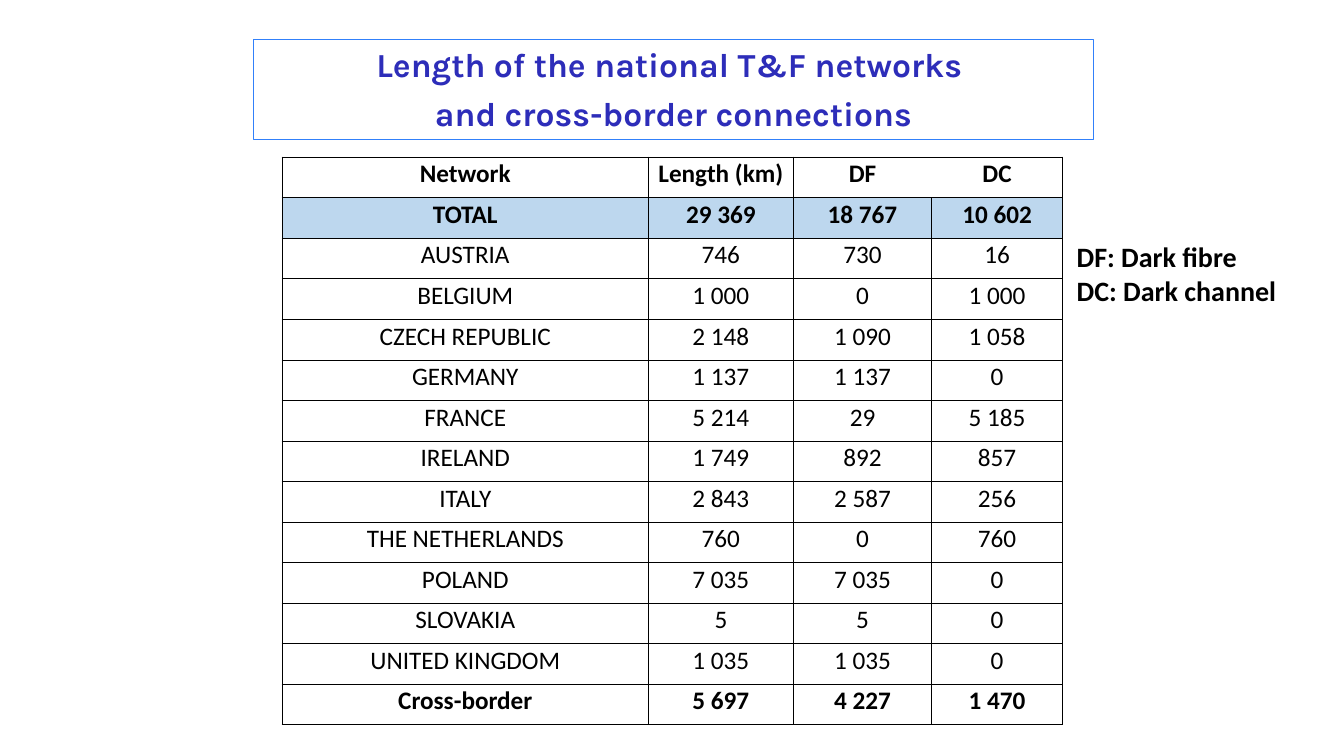
from dataclasses import dataclass

from lxml import etree
from pptx import Presentation
from pptx import util as u
from pptx.dml.color import RGBColor
from pptx.enum import shapes, text
from pptx.oxml.ns import qn

PX = 9144


@dataclass(frozen=True)
class Theme:
    ink: str = "000000"
    title: str = "2D2DB9"
    frame: str = "3180FA"
    total: str = "BDD7EE"
    head: str = "Karla"
    body: str = "Calibri"
    big: int = 24
    mid: int = 20
    small: int = 18
    thin: float = 0.5
    edge: float = 0.75
    thick: float = 1


@dataclass(frozen=True)
class Box:
    left: int
    top: int
    width: int
    height: int

    def emu(self) -> tuple:
        return tuple(n * PX for n in (self.left, self.top, self.width, self.height))


@dataclass(frozen=True)
class Row:
    name: str
    length: str
    fibre: str
    channel: str
    bold: bool = False
    fill: str = ""

    def texts(self) -> tuple:
        return self.name, self.length, self.fibre, self.channel


THEME = Theme()
WIDTHS = (363, 144, 137, 130)
ROWS = (
    Row("Network", "Length (km)", "DF", "DC", True),
    Row("TOTAL", "29 369", "18 767", "10 602", True, THEME.total),
    Row("AUSTRIA", "746", "730", "16"),
    Row("BELGIUM", "1 000", "0", "1 000"),
    Row("CZECH REPUBLIC", "2 148", "1 090", "1 058"),
    Row("GERMANY", "1 137", "1 137", "0"),
    Row("FRANCE", "5 214", "29", "5 185"),
    Row("IRELAND", "1 749", "892", "857"),
    Row("ITALY", "2 843", "2 587", "256"),
    Row("THE NETHERLANDS", "760", "0", "760"),
    Row("POLAND", "7 035", "7 035", "0"),
    Row("SLOVAKIA", "5", "5", "0"),
    Row("UNITED KINGDOM", "1 035", "1 035", "0"),
    Row("Cross-border", "5 697", "4 227", "1 470", True),
)


def style(para, face: str, size: int, color: str, bold: bool) -> None:
    font = para.font
    font.name = face
    font.size = u.Pt(size)
    font.bold = bold
    font.color.rgb = RGBColor.from_string(color)


def border(cell, sides: dict) -> None:
    props = cell._tc.get_or_add_tcPr()
    for spot, (side, width) in enumerate(sides.items()):
        line = etree.Element(qn(f"a:ln{side}"), w=str(int(u.Pt(width))))
        if width:
            fill = etree.SubElement(line, qn("a:solidFill"))
            etree.SubElement(fill, qn("a:srgbClr"), val=THEME.ink)
        else:
            etree.SubElement(line, qn("a:noFill"))
        props.insert(spot, line)


def edges(row: int, col: int) -> dict:
    last, end = len(ROWS) - 1, len(WIDTHS) - 1
    thin, thick = THEME.thin, THEME.thick
    sides = {
        "L": thick if col == 0 else thin,
        "R": thick if col == end else thin,
        "T": thick if row < 2 else thin,
        "B": thick if row in (0, last) else thin,
    }
    if row == 0 and col == end - 1:
        sides["R"] = 0
    if row == 0 and col == end:
        sides["L"] = 0
    return sides


def fill_cell(cell, label: str, row: Row, sides: dict) -> None:
    cell.text = label
    cell.vertical_anchor = text.MSO_ANCHOR.BOTTOM
    cell.margin_left = cell.margin_right = cell.margin_top = PX
    cell.margin_bottom = 8 * PX
    if row.fill:
        cell.fill.solid()
        cell.fill.fore_color.rgb = RGBColor.from_string(row.fill)
    else:
        cell.fill.background()
    para = cell.text_frame.paragraphs[0]
    para.alignment = text.PP_ALIGN.CENTER
    style(para, THEME.body, THEME.small, THEME.ink, row.bold)
    border(cell, sides)


def add_grid(slide, box: Box) -> None:
    frame = slide.shapes.add_table(len(ROWS), len(WIDTHS), *box.emu())
    table = frame.table
    table.first_row = table.horz_banding = False
    for col, width in zip(table.columns, WIDTHS):
        col.width = width * PX
    for r, row in enumerate(ROWS):
        for c, label in enumerate(row.texts()):
            fill_cell(table.cell(r, c), label, row, edges(r, c))


def add_title(slide, box: Box, lines: str) -> None:
    shape = slide.shapes.add_shape(shapes.MSO_SHAPE.RECTANGLE, *box.emu())
    shape.shadow.inherit = False
    shape.fill.background()
    shape.line.color.rgb = RGBColor.from_string(THEME.frame)
    shape.line.width = u.Pt(THEME.edge)
    frame = shape.text_frame
    frame.word_wrap = True
    frame.auto_size = text.MSO_AUTO_SIZE.SHAPE_TO_FIT_TEXT
    frame.vertical_anchor = text.MSO_ANCHOR.TOP
    frame.text = lines
    for para in frame.paragraphs:
        para.alignment = text.PP_ALIGN.CENTER
        para.space_after = u.Pt(6)
        style(para, THEME.head, THEME.big, THEME.title, True)


def add_key(slide, box: Box, lines: str) -> None:
    frame = slide.shapes.add_textbox(*box.emu()).text_frame
    frame.word_wrap = False
    frame.auto_size = text.MSO_AUTO_SIZE.SHAPE_TO_FIT_TEXT
    frame.text = lines
    for para in frame.paragraphs:
        style(para, THEME.body, THEME.mid, THEME.ink, True)


def main() -> None:
    deck = Presentation()
    deck.slide_width, deck.slide_height = 1333 * PX, 750 * PX
    slide = deck.slides.add_slide(deck.slide_layouts[6])
    add_grid(slide, Box(280, 156, sum(WIDTHS), 563))
    add_title(
        slide,
        Box(251, 39, 834, 99),
        "Length of the national T&F networks \nand cross-border connections",
    )
    add_key(slide, Box(1058, 233, 220, 77), "DF: Dark fibre\nDC: Dark channel")
    deck.save("out.pptx")


if __name__ == "__main__":
    main()
